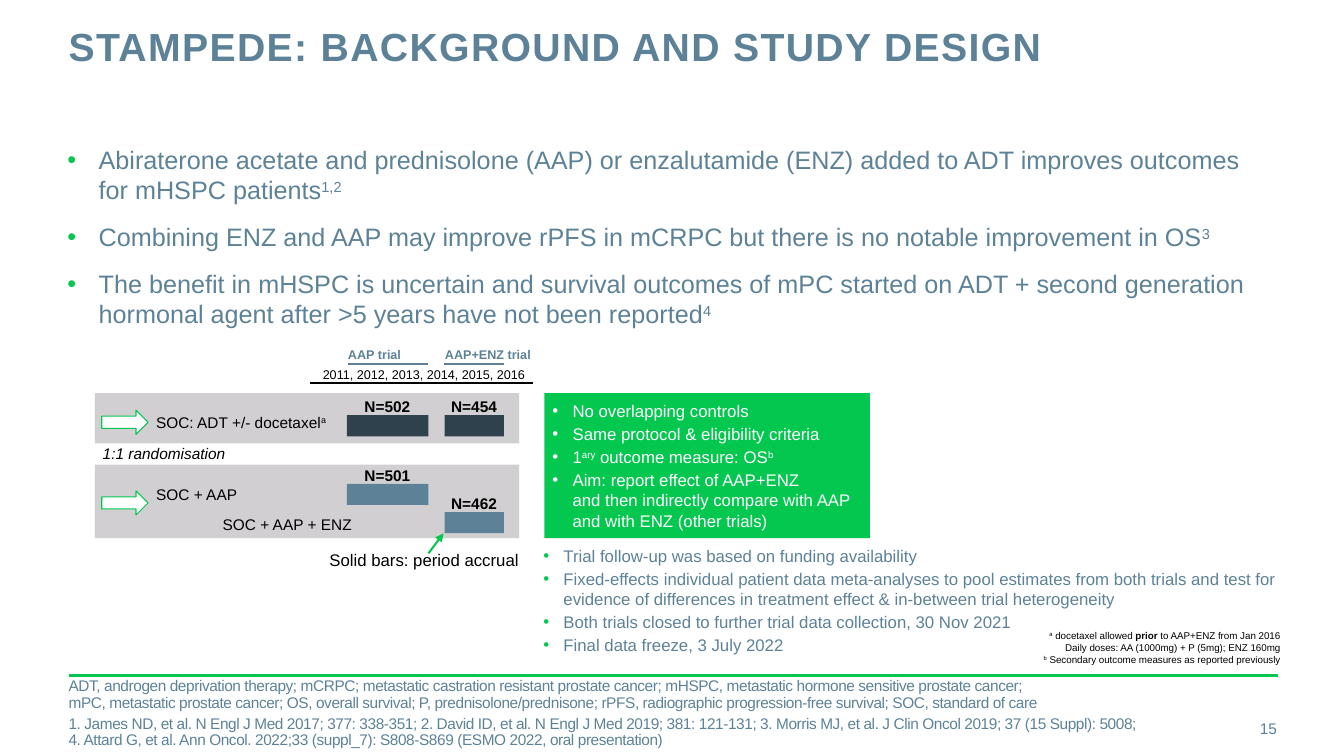
import dataclasses
import typing

import lxml.etree
import pptx
import pptx.dml.color
import pptx.enum.shapes
import pptx.enum.text
import pptx.oxml.ns
import pptx.util

Pt = pptx.util.Pt
qn = pptx.oxml.ns.qn
SHAPE = pptx.enum.shapes.MSO_SHAPE
ALIGN = pptx.enum.text.PP_ALIGN
ANCHOR = pptx.enum.text.MSO_ANCHOR
FIT = pptx.enum.text.MSO_AUTO_SIZE

COLORS = {
    "slate": "5D8298", "dark": "2E414C", "green": "03C74F",
    "panel": "D1CFD1", "white": "FFFFFF", "black": "000000",
}
Box = tuple[float, float, float, float]  # left, top, width, height


@dataclasses.dataclass
class Style:
    size: float
    color: str = "black"
    bold: bool = False
    italic: bool = False
    tracking: float = 0
    align: typing.Any = ALIGN.LEFT
    gap: float = 0  # space before every paragraph but the first
    spacing: typing.Any = None
    bullet: str = ""  # bullet colour
    indent: float = 0


@dataclasses.dataclass
class Label:
    box: Box
    paragraphs: list[str]  # ^superscript^, *bold*, \n for a line break
    style: Style
    inset: tuple[float, float] = (0, 0)
    wrap: bool = False
    anchor: typing.Any = ANCHOR.TOP


@dataclasses.dataclass
class Bar:
    column: int
    top: float
    color: str
    count: str


@dataclasses.dataclass
class Rule:
    start: tuple[float, float]
    end: tuple[float, float]
    color: str
    width: float
    arrow: bool = False


def rgb(name: str) -> pptx.dml.color.RGBColor:
    return pptx.dml.color.RGBColor.from_string(COLORS[name])


def set_all(target: typing.Any, values: dict[str, typing.Any]) -> None:
    for name, value in values.items():
        setattr(target, name, value)


def add_bullet(p: typing.Any, style: Style) -> None:
    pPr = p._p.get_or_add_pPr()
    pPr.set("marL", str(Pt(style.indent)))
    pPr.set("indent", str(-Pt(style.indent)))
    clr = lxml.etree.SubElement(pPr, qn("a:buClr"))
    lxml.etree.SubElement(clr, qn("a:srgbClr"), val=COLORS[style.bullet])
    lxml.etree.SubElement(pPr, qn("a:buFont"), typeface="Arial")
    lxml.etree.SubElement(pPr, qn("a:buChar"), char="•")


def add_run(p: typing.Any, text: str, style: Style, raised: bool, bold: bool) -> None:
    r = p.add_run()
    r.text = text
    set_all(r.font, {"name": "Arial", "size": Pt(style.size),
                     "bold": style.bold or bold, "italic": style.italic})
    r.font.color.rgb = rgb(style.color)
    rPr = r._r.get_or_add_rPr()
    if style.tracking:
        rPr.set("spc", str(round(style.tracking * 100)))
    if raised:
        rPr.set("baseline", "30000")


def write(sp: typing.Any, label: Label) -> None:
    tf = sp.text_frame
    x, y = label.inset
    set_all(tf, {"margin_left": Pt(x), "margin_right": Pt(x),
                 "margin_top": Pt(y), "margin_bottom": Pt(y),
                 "word_wrap": label.wrap, "vertical_anchor": label.anchor,
                 "auto_size": FIT.NONE if label.wrap else FIT.SHAPE_TO_FIT_TEXT})
    style = label.style
    for n, text in enumerate(label.paragraphs):
        p = tf.add_paragraph() if n else tf.paragraphs[0]
        if style.bullet:
            add_bullet(p, style)
        set_all(p, {"alignment": style.align, "line_spacing": style.spacing,
                    "space_before": Pt(style.gap if n else 0)})
        for i, part in enumerate(text.split("^")):
            for j, piece in enumerate(part.split("*")):
                for k, line in enumerate(piece.split("\n")):
                    if k:
                        p.add_line_break()
                    if line:
                        add_run(p, line, style, i % 2 == 1, j % 2 == 1)


def add_label(slide: typing.Any, label: Label) -> None:
    write(slide.shapes.add_textbox(*map(Pt, label.box)), label)


def add_block(slide: typing.Any, kind: typing.Any, box: Box, fill: str, line: str = "") -> typing.Any:
    sp = slide.shapes.add_shape(kind, *map(Pt, box))
    sp.shadow.inherit = False
    sp.fill.solid()
    sp.fill.fore_color.rgb = rgb(fill)
    if line:
        sp.line.color.rgb = rgb(line)
        sp.line.width = Pt(0.75)
    else:
        sp.line.fill.background()
    return sp


def add_rule(slide: typing.Any, rule: Rule) -> None:
    c = slide.shapes.add_connector(pptx.enum.shapes.MSO_CONNECTOR.STRAIGHT,
                                   *map(Pt, rule.start + rule.end))
    c.line.color.rgb = rgb(rule.color)
    c.line.width = Pt(rule.width)
    if rule.arrow:
        lxml.etree.SubElement(c.line._get_or_add_ln(), qn("a:tailEnd"), type="triangle")
    lxml.etree.SubElement(c._element.spPr, qn("a:effectLst"))


def add_bar(slide: typing.Any, bar: Bar) -> None:
    left, width = BAR_COLUMNS[bar.column]
    add_block(slide, SHAPE.RECTANGLE, (left, bar.top, width, 15.1), bar.color)
    count_box = (left + (width - 33) / 2, bar.top - 13, 33, 13.7)
    add_label(slide, Label(count_box, [bar.count], Style(11, bold=True)))


BAR_COLUMNS = [(247.7, 58.3), (317.5, 42.5)]
ARMS = [(280.8, 36, 293), (331.9, 52.6, 350.6)]  # panel top, panel height, arrow top
BARS = [
    Bar(0, 296.6, "dark", "N=502"), Bar(1, 296.6, "dark", "N=454"),
    Bar(0, 345.6, "slate", "N=501"), Bar(1, 365.8, "slate", "N=462"),
]
RULES = [
    Rule((49, 482.4), (913, 482.4), "green", 2),
    Rule((248.4, 260), (306, 260), "slate", 1),
    Rule((317.5, 260), (360, 260), "slate", 1),
    Rule((221.8, 273.6), (380.9, 273.6), "black", 1),
    Rule((306, 395.3), (316.8, 380.9), "green", 1.5, arrow=True),
]

TITLE = Label((49, 19.4, 703.4, 63.4), ["STAMPEDE: BACKGROUND AND STUDY DESIGN"],
              Style(28, "slate", bold=True, tracking=1, spacing=Pt(30)), wrap=True)
AIMS = Label((388.8, 280.8, 232.6, 103.7), [
    "No overlapping controls",
    "Same protocol & eligibility criteria",
    "1^ary^ outcome measure: OS^b^",
    "Aim: report effect of AAP+ENZ\nand then indirectly compare with AAP\nand with ENZ (other trials)",
], Style(12, "white", gap=2, bullet="white", indent=14.4), (5.8, 0), True, ANCHOR.MIDDLE)

ARM, TRIAL = Style(11), Style(9, "slate", bold=True, align=ALIGN.CENTER)
PAD = (7.2, 3.6)
LABELS = [
    # Background
    Label((48.2, 103, 863.3, 143.3), [
        "Abiraterone acetate and prednisolone (AAP) or enzalutamide (ENZ) added to ADT improves outcomes for mHSPC patients^1,2^",
        "Combining ENZ and AAP may improve rPFS in mCRPC but there is no notable improvement in OS^3^",
        "The benefit in mHSPC is uncertain and survival outcomes of mPC started on ADT + second\u00a0generation hormonal agent after >5 years have not been reported^4^",
    ], Style(18, "slate", gap=12, bullet="green", indent=22.3), wrap=True),
    # Timeline
    Label((248.4, 247.7, 38.2, 10.8), ["AAP trial"], TRIAL),
    Label((317.5, 247.7, 61.9, 10.8), ["AAP+ENZ trial"], TRIAL),
    Label((229.7, 262.1, 146.2, 10.8), ["2011, 2012, 2013, 2014, 2015, 2016"],
          Style(9, align=ALIGN.CENTER)),
    # Trial arms
    Label((104.4, 291.6, 139, 20.9), ["SOC: ADT +/- docetaxel^a^"], ARM, PAD),
    Label((73.4, 317.5, 88.6, 13.7), ["1:1 randomisation"], Style(11, italic=True)),
    Label((104.4, 342.7, 73.4, 20.9), ["SOC + AAP"], ARM, PAD),
    Label((151.9, 364.3, 108, 20.9), ["SOC + AAP + ENZ"], ARM, PAD),
    Label((228.2, 388.8, 150.5, 21.6), ["Solid bars: period accrual"], Style(12), PAD),
    # Conduct of the trials
    Label((388.1, 389.5, 580.3, 83.5), [
        "Trial follow-up was based on funding availability",
        "Fixed-effects individual patient data meta-analyses to pool estimates from both trials and test for\nevidence of differences in treatment effect & in-between trial heterogeneity",
        "Both trials closed to further trial data collection, 30 Nov 2021",
        "Final data freeze, 3 July 2022",
    ], Style(12, "slate", gap=2, bullet="green", indent=14.4), wrap=True),
    # Notes, abbreviations, references and slide number
    Label((735.1, 446.4, 186.5, 32.4), [
        "^a^ docetaxel allowed *prior* to AAP+ENZ from Jan 2016\nDaily doses: AA (1000mg) + P (5mg); ENZ 160mg\n^b^ Secondary outcome measures as reported previously",
    ], Style(7, align=ALIGN.RIGHT), PAD),
    Label((49, 484.6, 765.4, 50), [
        "ADT, androgen deprivation therapy; mCRPC; metastatic castration resistant prostate cancer; mHSPC, metastatic hormone sensitive prostate cancer;\nmPC, metastatic prostate cancer; OS, overall survival; P, prednisolone/prednisone; rPFS, radiographic progression-free survival; SOC, standard of care",
        "1. James ND, et al. N Engl J Med 2017; 377: 338-351; 2. David ID, et al. N Engl J Med 2019; 381: 121-131; 3. Morris MJ, et al. J Clin Oncol 2019; 37 (15 Suppl): 5008; 4. Attard G, et al. Ann Oncol. 2022;33 (suppl_7): S808-S869 (ESMO 2022, oral presentation)",
    ], Style(11, "slate", tracking=-0.3, gap=3, spacing=0.9), wrap=True),
    Label((850.3, 506.2, 61.9, 28.8), ["15"], Style(11, "slate", align=ALIGN.RIGHT),
          wrap=True, anchor=ANCHOR.MIDDLE),
]


def main() -> None:
    prs = pptx.Presentation()
    set_all(prs, {"slide_width": Pt(960), "slide_height": Pt(540)})
    slide = prs.slides.add_slide(prs.slide_layouts[5])

    # Title
    title = slide.shapes.title
    set_all(title, dict(zip(("left", "top", "width", "height"), map(Pt, TITLE.box))))
    write(title, TITLE)

    # Study design diagram
    for top, height, arrow_top in ARMS:
        add_block(slide, SHAPE.RECTANGLE, (67.7, top, 303.1, height), "panel")
        add_block(slide, SHAPE.RIGHT_ARROW, (72.7, arrow_top, 33.1, 17.3), "white", "green")
    for bar in BARS:
        add_bar(slide, bar)
    write(add_block(slide, SHAPE.RECTANGLE, AIMS.box, "green"), AIMS)

    # Rules and text
    for rule in RULES:
        add_rule(slide, rule)
    for label in LABELS:
        add_label(slide, label)
    prs.save("out.pptx")


if __name__ == "__main__":
    main()
